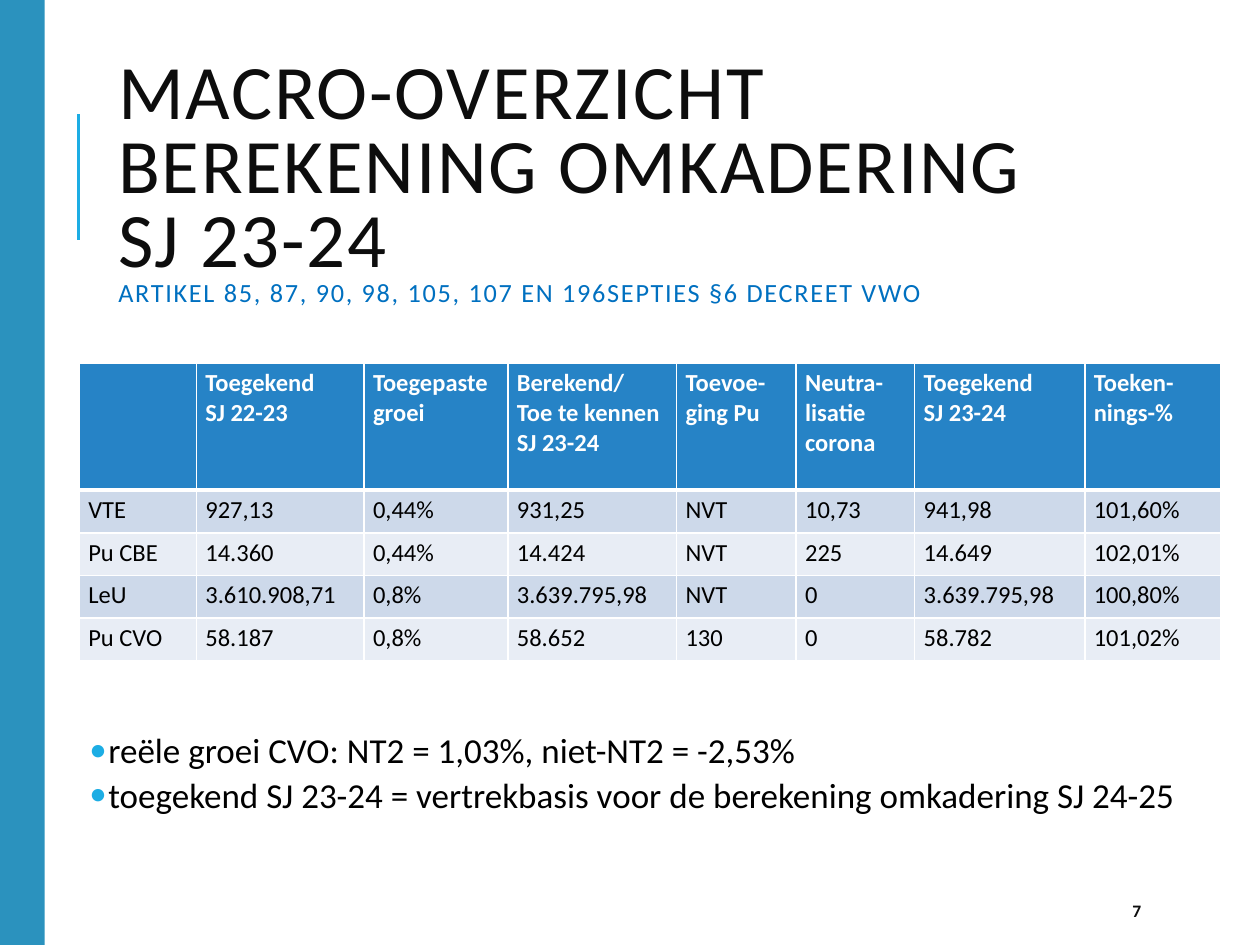
"""Build the slide with the macro overview of the staffing calculation for school year 23-24."""
from lxml.etree import SubElement
from pptx import Presentation
from pptx.dml.color import RGBColor
from pptx.enum.shapes import MSO_CONNECTOR, MSO_SHAPE
from pptx.enum.text import MSO_ANCHOR, MSO_AUTO_SIZE, PP_ALIGN
from pptx.oxml.ns import qn
from pptx.util import Cm, Pt

FONT = "Calibri"
COLORS = {
    "band": "2B92BE",
    "accent": "1CADE4",
    "title": "0D0D0D",
    "subtitle": "0070C0",
    "header": "2683C6",
    "odd": "CDD9EA",
    "even": "E8EDF5",
    "white": "FFFFFF",
    "text": "000000",
}
TITLE = "MACRO-OVERZICHT BEREKENING OMKADERING SJ 23-24"
SUBTITLE = "ARTIKEL 85, 87, 90, 98, 105, 107 EN 196SEPTIES §6 DECREET VWO"
HEADERS = [
    "",
    "Toegekend\nSJ 22-23",
    "Toegepaste groei",
    "Berekend/\nToe te kennen\nSJ 23-24",
    "Toevoe-ging Pu",
    "Neutra-lisatie corona",
    "Toegekend\nSJ 23-24",
    "Toeken-nings-%",
]
ROWS = [
    ["VTE", "927,13", "0,44%", "931,25", "NVT", "10,73", "941,98", "101,60%"],
    ["Pu CBE", "14.360", "0,44%", "14.424", "NVT", "225", "14.649", "102,01%"],
    ["LeU", "3.610.908,71", "0,8%", "3.639.795,98", "NVT", "0", "3.639.795,98", "100,80%"],
    ["Pu CVO", "58.187", "0,8%", "58.652", "130", "0", "58.782", "101,02%"],
]
COLUMN_WIDTHS = [2.36, 3.38, 2.9, 3.4, 2.41, 2.39, 3.43, 2.74]
HEADER_HEIGHT, ROW_HEIGHT = 2.56, 0.86
BULLETS = [
    "reële groei CVO: NT2 = 1,03%, niet-NT2 = -2,53%",
    "toegekend SJ 23-24 = vertrekbasis voor de berekening omkadering SJ 24-25",
]
PAGE_NUMBER = "7"


def color(name):
    return RGBColor.from_string(COLORS[name])


def add_run(paragraph, text, size, color_name, bold=False, spacing=None):
    run = paragraph.add_run()
    run.text = text
    run.font.name = FONT
    run.font.size = Pt(size)
    run.font.bold = bold
    run.font.color.rgb = color(color_name)
    if spacing is not None:
        run.font._element.set("spc", str(spacing * 100))


def place(shape, left, top, width, height):
    shape.left, shape.top, shape.width, shape.height = map(Cm, (left, top, width, height))


def add_decoration(slide, presentation):
    band = slide.shapes.add_shape(MSO_SHAPE.RECTANGLE, 0, 0, Cm(0.9), presentation.slide_height)
    band.shadow.inherit = False
    band.fill.solid()
    band.fill.fore_color.rgb = color("band")
    band.line.fill.background()
    line = slide.shapes.add_connector(MSO_CONNECTOR.STRAIGHT, Cm(1.58), Cm(4.83), Cm(1.58), Cm(2.29))
    line.line.color.rgb = color("accent")
    line.line.width = Pt(1.5)
    SubElement(line._element.spPr, qn("a:effectLst"))


def fill_title(title):
    place(title, 2.13, 1.63, 20.24, 4.17)
    frame = title.text_frame
    frame.auto_size = MSO_AUTO_SIZE.NONE
    frame.vertical_anchor = MSO_ANCHOR.MIDDLE
    paragraph = frame.paragraphs[0]
    paragraph.alignment = PP_ALIGN.LEFT
    paragraph.line_spacing = 0.8
    add_run(paragraph, TITLE, 44, "title", spacing=1)
    paragraph.add_line_break()
    add_run(paragraph, SUBTITLE, 15, "subtitle", spacing=1)


def set_borders(cell, top, bottom):
    properties = cell._tc.get_or_add_tcPr()
    for side, width in (("L", 1), ("R", 1), ("T", top), ("B", bottom)):
        border = SubElement(properties, qn(f"a:ln{side}"), w=str(Pt(width)))
        SubElement(SubElement(border, qn("a:solidFill")), qn("a:srgbClr"), val=COLORS["white"])


def fill_cell(cell, text, row):
    is_header = row == 0
    set_borders(cell, 3 if row == 1 else 1, 3 if is_header else 1)
    cell.fill.solid()
    cell.fill.fore_color.rgb = color("header" if is_header else "odd" if row % 2 else "even")
    cell.margin_left = cell.margin_right = Cm(0.18)
    cell.margin_top = cell.margin_bottom = Cm(0.1)
    for index, content in enumerate(text.split("\n") if text else []):
        frame = cell.text_frame
        paragraph = frame.add_paragraph() if index else frame.paragraphs[0]
        add_run(paragraph, content, 14, "white" if is_header else "text", is_header)


def add_overview(slide):
    heights = [HEADER_HEIGHT] + [ROW_HEIGHT] * len(ROWS)
    table = slide.shapes.add_table(
        len(heights), len(HEADERS), Cm(1.6), Cm(7.32), Cm(sum(COLUMN_WIDTHS)), Cm(sum(heights))
    ).table
    for column, width in zip(table.columns, COLUMN_WIDTHS):
        column.width = Cm(width)
    for row, height in zip(table.rows, heights):
        row.height = Cm(height)
    for row, values in enumerate([HEADERS] + ROWS):
        for column, text in enumerate(values):
            fill_cell(table.cell(row, column), text, row)


def fill_bullets(body):
    place(body, 1.19, 14.73, 23.8, 1.85)
    frame = body.text_frame
    frame.auto_size = MSO_AUTO_SIZE.SHAPE_TO_FIT_TEXT
    for index, text in enumerate(BULLETS):
        paragraph = frame.add_paragraph() if index else frame.paragraphs[0]
        paragraph.level = 1
        paragraph.line_spacing = 0.8
        paragraph.space_before, paragraph.space_after = Pt(2), Pt(4)
        properties = paragraph._p.get_or_add_pPr()
        properties.set("marL", str(Cm(0.74)))
        properties.set("indent", str(Cm(-0.38)))
        SubElement(SubElement(properties, qn("a:buClr")), qn("a:srgbClr"), val=COLORS["accent"])
        SubElement(properties, qn("a:buFont"), typeface=FONT)
        SubElement(properties, qn("a:buChar"), char="•")
        add_run(paragraph, text, 20, "text")


def add_page_number(slide):
    box = slide.shapes.add_textbox(Cm(22.58), Cm(17.98), Cm(2.03), Cm(0.76))
    box.text_frame.word_wrap = True
    box.text_frame.vertical_anchor = MSO_ANCHOR.MIDDLE
    add_run(box.text_frame.paragraphs[0], PAGE_NUMBER, 10, "title", bold=True)


def main():
    presentation = Presentation()
    presentation.slide_width, presentation.slide_height = Cm(25.4), Cm(19.05)
    slide = presentation.slides.add_slide(presentation.slide_layouts[1])
    add_decoration(slide, presentation)
    fill_title(slide.shapes.title)
    add_overview(slide)
    fill_bullets(slide.placeholders[1])
    add_page_number(slide)
    presentation.save("out.pptx")


if __name__ == "__main__":
    main()
